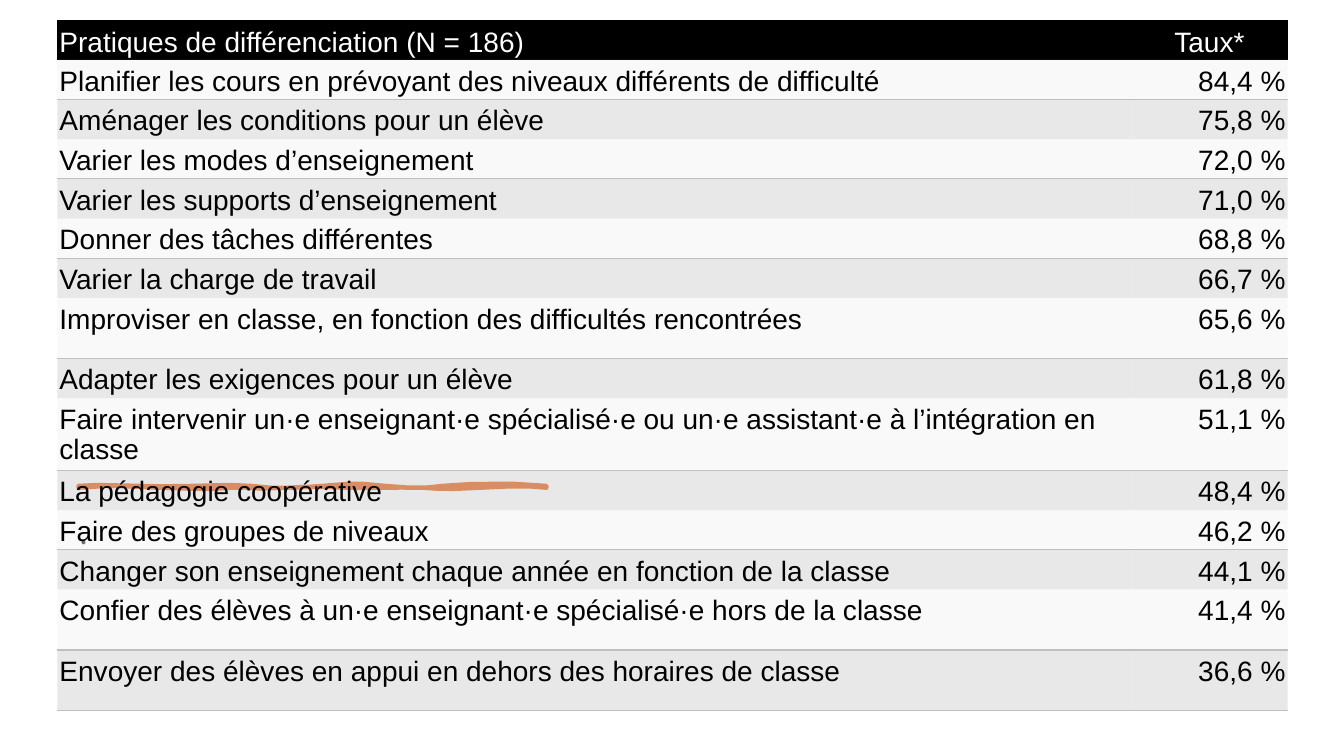
from lxml.etree import SubElement
from pptx import Presentation
from pptx.dml.color import RGBColor
from pptx.enum.text import MSO_ANCHOR as Anchor, PP_ALIGN as Align
from pptx.oxml import parse_xml
from pptx.oxml.ns import nsdecls, qn
from pptx.util import Inches, Pt

PRACTICES = [
    ("Planifier les cours en prévoyant des niveaux différents de difficulté", "84,4 %"),
    ("Aménager les conditions pour un élève", "75,8 %"),
    ("Varier les modes d’enseignement", "72,0 %"),
    ("Varier les supports d’enseignement", "71,0 %"),
    ("Donner des tâches différentes", "68,8 %"),
    ("Varier la charge de travail", "66,7 %"),
    ("Improviser en classe, en fonction des difficultés rencontrées", "65,6 %"),
    ("Adapter les exigences pour un élève", "61,8 %"),
    ("Faire intervenir un·e enseignant·e spécialisé·e ou un·e assistant·e "
     "à l’intégration en classe", "51,1 %"),
    ("La pédagogie coopérative", "48,4 %"),
    ("Faire des groupes de niveaux", "46,2 %"),
    ("Changer son enseignement chaque année en fonction de la classe", "44,1 %"),
    ("Confier des élèves à un·e enseignant·e spécialisé·e hors de la classe", "41,4 %"),
    ("Envoyer des élèves en appui en dehors des horaires de classe", "36,6 %"),
]
ROW_HEIGHT = 0.39
TALL_ROWS = {7: 0.6, 9: 0.7, 13: 0.6, 14: 0.6}
NO_STYLE = "{2D5ABB26-0587-4C30-8999-92F81FD0307C}"

# Bézier segments of the brush stroke: two control points and an end, from its top left corner
STROKE = [
    (0.17, -0.02, 0.42, 0, 0.62, 0), (0.82, 0.01, 0.99, 0, 1.14, 0),
    (1.29, 0, 1.49, -0.02, 1.71, 0), (1.94, 0.03, 2.09, 0.03, 2.42, 0),
    (2.75, -0.03, 2.75, -0.03, 3.04, 0), (3.32, 0.03, 3.48, 0.02, 3.61, 0),
    (3.74, -0.02, 4.39, -0.04, 4.64, 0), (4.64, 0.01, 4.64, 0.01, 4.64, 0.02),
    (4.5, 0, 4.3, 0, 3.98, 0.02), (3.66, 0.04, 3.56, 0.03, 3.41, 0.02),
    (3.26, 0.01, 2.87, 0.03, 2.65, 0.02), (2.44, 0.01, 2.29, 0, 2.04, 0.02),
    (1.79, 0.05, 1.64, 0, 1.51, 0.02), (1.38, 0.04, 1.14, 0.03, 0.8, 0.02),
    (0.46, 0.01, 0.37, -0.02, 0, 0.02),
]


def rgb(color):
    return RGBColor.from_string(color)


def write(tf, text, size, font, color, before, spacing, align=Align.LEFT):
    p = tf.paragraphs[0]
    for name, value in {"alignment": align, "space_before": Pt(before),
                        "line_spacing": spacing}.items():
        setattr(p, name, value)
    r = p.add_run()
    r.text = text
    r.font.size, r.font.name = Pt(size), font
    r.font.color.rgb = rgb(color)


def sample_curves(segments, steps=3):
    """Turn the Bézier segments into a list of points."""
    x, y, points = 0, 0, []
    for x1, y1, x2, y2, x3, y3 in segments:
        for t in (i / steps for i in range(1, steps + 1)):
            a, b, c, d = (1 - t) ** 3, 3 * t * (1 - t) ** 2, 3 * t * t * (1 - t), t ** 3
            points.append((a * x + b * x1 + c * x2 + d * x3,
                           a * y + b * y1 + c * y2 + d * y3))
        x, y = x3, y3
    return points


def add_brush_stroke(slide, left, top, color):
    builder = slide.shapes.build_freeform(0, 0)
    builder.add_line_segments([(Inches(x), Inches(y)) for x, y in sample_curves(STROKE)],
                              close=True)
    s = builder.convert_to_shape(Inches(left), Inches(top))
    s.shadow.inherit = False
    s.fill.solid()
    s.fill.fore_color.rgb = s.line.color.rgb = rgb(color)
    s.line.width = Pt(3)


def add_body(slide, left, top, width, height):
    s = slide.shapes.add_textbox(*map(Inches, (left, top, width, height)))
    s.text_frame.word_wrap = True
    write(s.text_frame, ".", 24, "Karla", "000000", 10, 0.9)


def set_fill(cell, color, opacity):
    cell.fill.solid()
    cell.fill.fore_color.rgb = rgb(color)
    if opacity < 100:
        clr = cell._tc.tcPr.find(f"{qn('a:solidFill')}/{qn('a:srgbClr')}")
        SubElement(clr, qn("a:alpha")).set("val", str(opacity * 1000))


def set_borders(cell, color, sides):
    """Draw the listed sides (of L, R, T, B) and switch the others off."""
    line = f'<a:solidFill><a:srgbClr val="{color}"/></a:solidFill>'
    for position, side in enumerate("LRTB"):
        width, fill = (12700, line) if side in sides else (0, "<a:noFill/>")
        cell._tc.tcPr.insert(position, parse_xml(
            f'<a:ln{side} {nsdecls("a")} w="{width}">{fill}</a:ln{side}>'))


def add_rate_table(slide, left, top, widths):
    rows = [("Pratiques de différenciation (N = 186)", "Taux*")] + PRACTICES
    last = len(rows) - 1
    heights = [TALL_ROWS.get(i, ROW_HEIGHT) for i in range(len(rows))]
    box = (left, top, sum(widths), sum(heights))
    table = slide.shapes.add_table(len(rows), len(widths), *map(Inches, box)).table
    table.first_row = table.horz_banding = False
    table._tbl.tblPr.find(qn("a:tableStyleId")).text = NO_STYLE
    for column, width in zip(table.columns, widths):
        column.width = Inches(width)
    for i, row in enumerate(rows):
        table.rows[i].height = Inches(heights[i])
        header, shaded = i == 0, i > 0 and i % 2 == 0
        fill = ("000000", 100) if header else ("BFBFBF", 35) if shaded else ("F2F2F2", 45)
        # A line shared by two rows is set on both of them
        sides = "" if header else "TB" if i == last else "T" if shaded else "B"
        for j, text in enumerate(row):
            cell = table.cell(i, j)
            for name, value in {"left": 0.02, "top": 0.07, "right": 0.02, "bottom": 0}.items():
                setattr(cell, f"margin_{name}", Inches(value))
            cell.vertical_anchor = Anchor.MIDDLE if header else Anchor.TOP
            align = Align.LEFT if j == 0 else Align.CENTER if header else Align.RIGHT
            write(cell.text_frame, text, 20, "Arial", "FFFFFF" if header else "000000",
                  4.7, 0.97, align)
            set_fill(cell, *fill)
            set_borders(cell, "BFBFBF", sides)


def main():
    prs = Presentation()
    prs.slide_width, prs.slide_height = Inches(13.33), Inches(7.5)
    slide = prs.slides.add_slide(prs.slide_layouts[6])
    add_body(slide, 0.7, 5.06, 7.32, 1.72)
    add_brush_stroke(slide, 0.78, 4.82, "E97132")
    add_rate_table(slide, 0.57, 0.2, (10.65, 1.55))
    prs.save("out.pptx")


if __name__ == "__main__":
    main()
